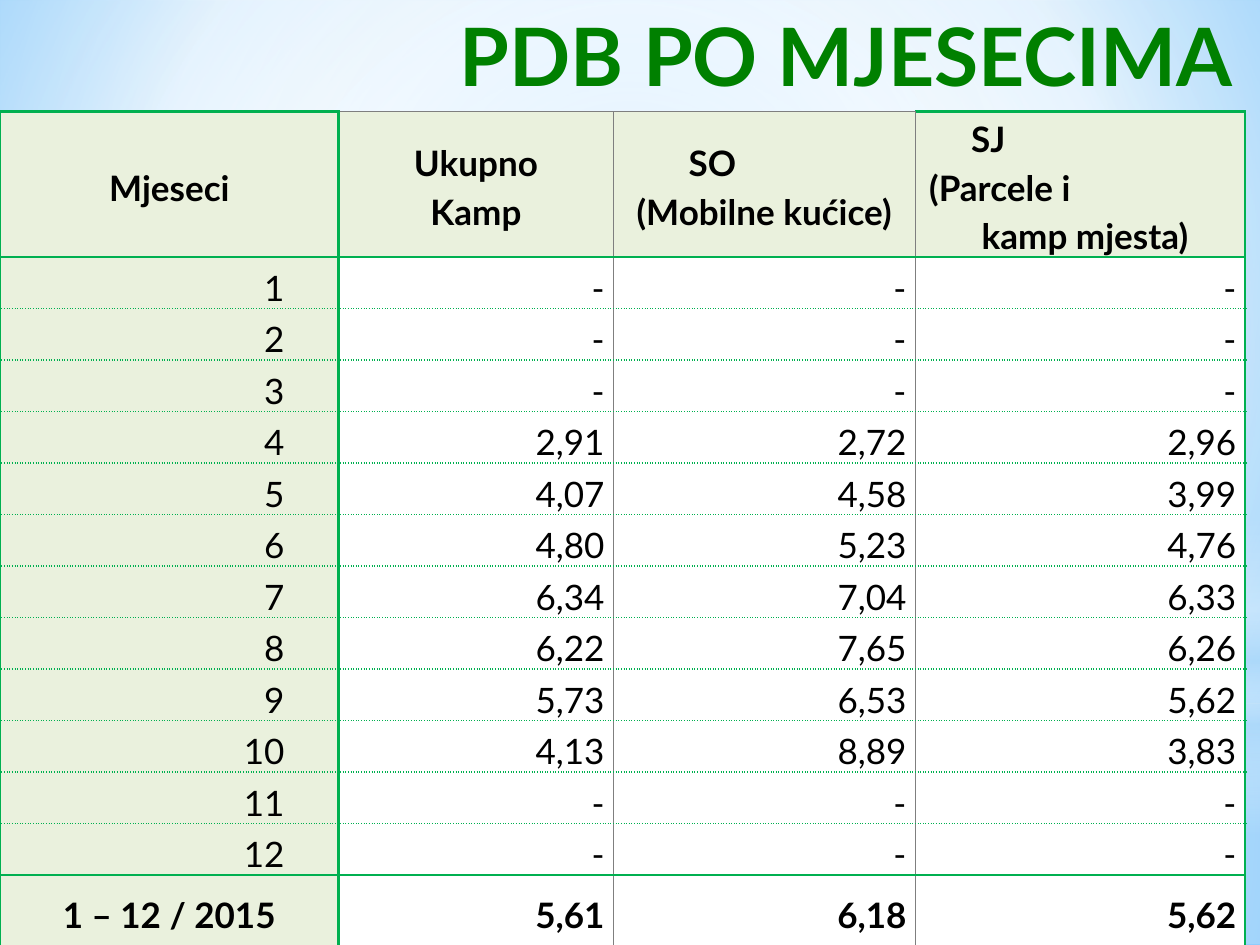
import pptx
import pptx.util
import pptx.dml.color
import pptx.enum.shapes
import pptx.enum.text
import pptx.oxml
import pptx.oxml.ns

Pt = pptx.util.Pt
ALIGN = pptx.enum.text.PP_ALIGN
ANCHOR = pptx.enum.text.MSO_ANCHOR
SHAPE = pptx.enum.shapes.MSO_SHAPE

COLORS = {"title": "008000", "text": "000000", "line": "00B050", "divider": "7F7F7F",
          "label": "EAF1DD", "white": "FFFFFF", "haze": "B4DCFA",
          "sky": "9ED5FF", "deep_sky": "5BB9FF"}
CENTRE = (50, 50, 50, 50)


def rgb(name):
    return pptx.dml.color.RGBColor.from_string(COLORS[name])


class SlideBuilder:
    font = "Lato"
    text_size = 20
    title_size = 46
    cell_inset = 5

    def __init__(self, slide):
        self.slide = slide

    def gradient(self, fill_parent, stops, focus=None):
        """Replace the solid fill with stops of (position, colour, opacity)."""
        stop_xml = "".join(
            f'<a:gs pos="{pos * 1000}"><a:srgbClr val="{COLORS[color]}">'
            f'<a:alpha val="{opacity * 1000}"/></a:srgbClr></a:gs>'
            for pos, color, opacity in stops)
        if focus:
            sides = " ".join(f'{side}="{value * 1000}"' for side, value in zip("ltrb", focus))
            way = f'<a:path path="circle"><a:fillToRect {sides}/></a:path>'
        else:
            way = '<a:lin ang="5400000" scaled="0"/>'
        solid = fill_parent.find(pptx.oxml.ns.qn("a:solidFill"))
        fill_parent.replace(solid, pptx.oxml.parse_xml(
            f'<a:gradFill {pptx.oxml.ns.nsdecls("a")} rotWithShape="1">'
            f'<a:gsLst>{stop_xml}</a:gsLst>{way}</a:gradFill>'))

    def background(self, stops, focus):
        fill = self.slide.background.fill
        fill.solid()
        fill.fore_color.rgb = rgb("white")
        self.gradient(self.slide.background._cSld.bg.bgPr, stops, focus)

    def glow(self, kind, top, height, stops, focus=None):
        glow = self.slide.shapes.add_shape(kind, Pt(0), Pt(top), Pt(720), Pt(height))
        glow.shadow.inherit = False
        glow.line.fill.background()
        glow.fill.solid()
        glow.fill.fore_color.rgb = rgb("white")
        self.gradient(glow._element.spPr, stops, focus)

    def format_runs(self, paragraph, size, color, bold):
        for run in paragraph.runs:
            run.font.name = self.font
            run.font.size = Pt(size)
            run.font.bold = bold
            run.font.color.rgb = rgb(color)

    def title(self, text, left, top, width, height):
        title = self.slide.shapes.title
        title.left, title.top, title.width, title.height = map(Pt, (left, top, width, height))
        frame = title.text_frame
        frame.text = text
        frame.vertical_anchor = ANCHOR.TOP
        frame.paragraphs[0].alignment = ALIGN.RIGHT
        self.format_runs(frame.paragraphs[0], self.title_size, "title", True)
        self.slide.shapes._spTree.append(title._element)  # bring in front of the glows

    def table(self, left, top, widths, heights):
        frame = self.slide.shapes.add_table(len(heights), len(widths), Pt(left), Pt(top),
                                            Pt(sum(widths)), Pt(sum(heights)))
        table = frame.table
        for column, width in zip(table.columns, widths):
            column.width = Pt(width)
        for row, height in zip(table.rows, heights):
            row.height = Pt(height)
        return table

    def cell(self, cell, lines, fill, align, anchor, bold=False, inset_right=None,
             indents=None, space_after=0):
        cell.fill.solid()
        cell.fill.fore_color.rgb = rgb(fill)
        cell.margin_left = Pt(self.cell_inset)
        cell.margin_right = Pt(inset_right or self.cell_inset)
        cell.margin_top = cell.margin_bottom = Pt(0)
        cell.vertical_anchor = anchor
        cell.text_frame.text = "\n".join(lines)
        for i, paragraph in enumerate(cell.text_frame.paragraphs):
            paragraph.alignment = align
            paragraph.line_spacing = 1.15
            paragraph.space_after = Pt(space_after)
            if indents and indents[i] is not None:
                paragraph.alignment = ALIGN.LEFT
                paragraph._p.get_or_add_pPr().set("marL", str(Pt(indents[i])))
            self.format_runs(paragraph, self.text_size, "text", bold)

    def borders(self, cell, **sides):
        """Each side (L, R, T, B) is (colour, width, dash)."""
        properties = cell._tc.get_or_add_tcPr()
        for i, side in enumerate("LRTB"):
            color, width, dash = sides[side]
            properties.insert(i, pptx.oxml.parse_xml(
                f'<a:ln{side} {pptx.oxml.ns.nsdecls("a")} w="{Pt(width)}">'
                f'<a:solidFill><a:srgbClr val="{COLORS[color]}"/></a:solidFill>'
                f'<a:prstDash val="{dash}"/></a:ln{side}>'))


# Each heading: its lines and their left indents (None keeps the line centred)
HEADINGS = [(["Mjeseci"], None),
            (["Ukupno", "Kamp"], None),
            (["SO", "(Mobilne kućice)"], [38, None]),
            (["SJ", "(Parcele i", "kamp mjesta)"], [27, 3, 33])]
NO_DATA = ["-"] * 3
MONTHS = [NO_DATA, NO_DATA, NO_DATA,
          ["2,91", "2,72", "2,96"], ["4,07", "4,58", "3,99"],
          ["4,80", "5,23", "4,76"], ["6,34", "7,04", "6,33"],
          ["6,22", "7,65", "6,26"], ["5,73", "6,53", "5,62"],
          ["4,13", "8,89", "3,83"], NO_DATA, NO_DATA]
YEAR = ["1 – 12 / 2015", "5,61", "6,18", "5,62"]
SOLID = ("line", 1.5, "solid")
DOTTED = ("line", 1, "dot")
DIVIDER = ("divider", 0.5, "solid")


def main():
    deck = pptx.Presentation()
    deck.slide_width, deck.slide_height = Pt(720), Pt(540)
    builder = SlideBuilder(deck.slides.add_slide(deck.slide_layouts[5]))

    # Sky background and soft glows
    builder.background([(0, "sky", 100), (60, "white", 100), (100, "deep_sky", 100)],
                       (20, 10, 20, 60))
    builder.glow(SHAPE.RECTANGLE, 402, 138,
                 [(0, "white", 91), (37, "white", 76), (100, "haze", 79)], CENTRE)
    builder.glow(SHAPE.RECTANGLE, 0, 402,
                 [(0, "white", 89), (48, "white", 62), (100, "haze", 79)], CENTRE)
    builder.glow(SHAPE.RECTANGLE, 296.6, 180,
                 [(0, "white", 0), (29, "white", 30), (45, "haze", 40),
                  (55, "white", 26), (65, "haze", 60), (100, "white", 0)])
    builder.glow(SHAPE.OVAL, 126, 402, [(0, "white", 100), (56, "white", 0)], CENTRE)

    # Title
    builder.title("PDB PO MJESECIMA", 48, 0, 663.4, 90)

    # Table text
    table = builder.table(0, 63.75, [193.5, 157, 172.5, 188.5],
                          [80.6] + [29.43] * len(MONTHS) + [41.8])
    for col, (lines, indents) in enumerate(HEADINGS):
        builder.cell(table.cell(0, col), lines, "label", ALIGN.CENTER, ANCHOR.MIDDLE,
                     bold=True, indents=indents)
    for month, values in enumerate(MONTHS, 1):
        builder.cell(table.cell(month, 0), [str(month)], "label", ALIGN.RIGHT,
                     ANCHOR.BOTTOM, inset_right=31)
        for col, value in enumerate(values, 1):
            builder.cell(table.cell(month, col), [value], "white", ALIGN.RIGHT, ANCHOR.BOTTOM)
    last_row, last_col = len(MONTHS) + 1, len(HEADINGS) - 1
    for col, value in enumerate(YEAR):
        builder.cell(table.cell(last_row, col), [value], "white" if col else "label",
                     ALIGN.RIGHT if col else ALIGN.CENTER, ANCHOR.MIDDLE, bold=True,
                     space_after=10 if col else 0)

    # Table lines: solid frame, dotted month rows, thin column dividers
    row_lines = [SOLID, SOLID] + [DOTTED] * (len(MONTHS) - 1) + [SOLID, SOLID]
    column_lines = [SOLID, SOLID, DIVIDER, DIVIDER, SOLID]
    for row in range(last_row + 1):
        for col in range(last_col + 1):
            top = DIVIDER if row == 0 and 0 < col < last_col else row_lines[row]
            builder.borders(table.cell(row, col), L=column_lines[col],
                            R=column_lines[col + 1], T=top, B=row_lines[row + 1])

    deck.save("out.pptx")


if __name__ == "__main__":
    main()
